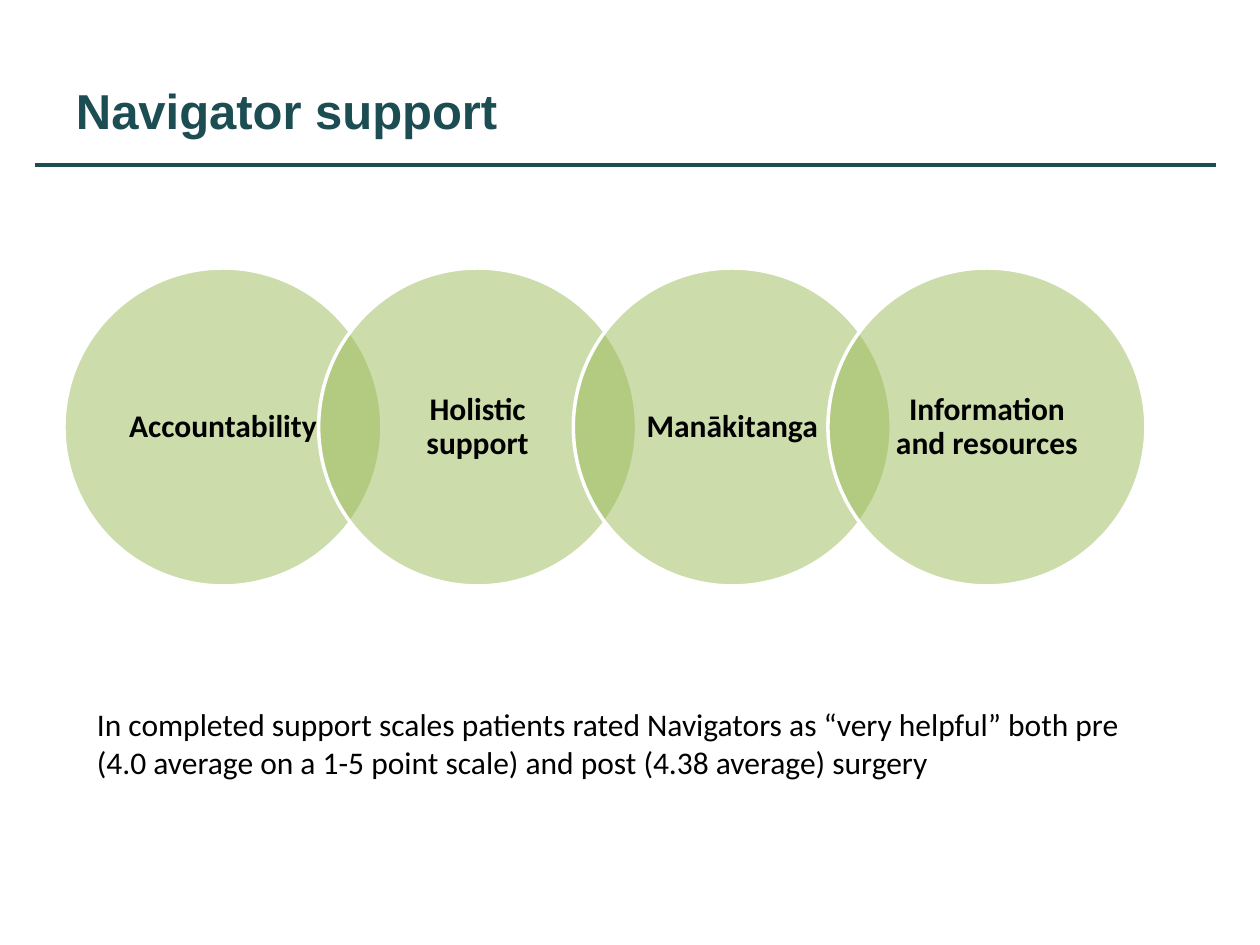
from lxml.etree import SubElement
from pptx import Presentation
from pptx.dml.color import RGBColor
from pptx.enum.shapes import MSO_CONNECTOR, MSO_SHAPE
from pptx.enum.text import MSO_ANCHOR, PP_ALIGN
from pptx.oxml.ns import qn
from pptx.util import Pt

TITLE = "Navigator support"
THEMES = ["Accountability", "Holistic support", "Manākitanga", "Information and resources"]
NOTE = ("In completed support scales patients rated Navigators as “very helpful” both pre "
        "(4.0 average on a 1-5 point scale) and post (4.38 average) surgery")
COLOR = {"teal": "1C4D52", "green": "9BBB59", "white": "FFFFFF", "black": "000000"}
HEAD = {"size": Pt(28), "name": "Arial", "bold": True}
LABEL = {"size": Pt(18), "name": "Calibri", "bold": True}
BODY = {"size": Pt(18), "name": "Calibri", "bold": False}
SCALE = 914400 / 126
FIRST, LAST, TOP, SIZE = 64, 828, 268, 318
INNER = 224


def px(n):
    return round(n * SCALE)


def rgb(name):
    return RGBColor.from_string(COLOR[name])


def write(shapes, text, box, font, color, anchor, align=PP_ALIGN.LEFT, space=1.0, pad=(13, 6)):
    frame = shapes.add_textbox(*map(px, box)).text_frame
    side, edge = map(px, pad)
    form = {"word_wrap": True, "vertical_anchor": anchor, "margin_left": side,
            "margin_right": side, "margin_top": edge, "margin_bottom": edge}
    for key, val in form.items():
        setattr(frame, key, val)
    para = frame.paragraphs[0]
    para.alignment = align
    para.line_spacing = space
    run = para.add_run()
    run.text = text
    for key, val in font.items():
        setattr(run.font, key, val)
    run.font.color.rgb = rgb(color)


def circle(shapes, left):
    disc = shapes.add_shape(MSO_SHAPE.OVAL, *map(px, (left, TOP, SIZE, SIZE)))
    disc.shadow.inherit = False
    disc.fill.solid()
    disc.fill.fore_color.rgb = rgb("green")
    tint = disc.fill._xPr.find(qn("a:solidFill"))[0]
    SubElement(tint, qn("a:alpha")).set("val", "50000")
    disc.line.color.rgb = rgb("white")
    disc.line.width = Pt(2)


def main():
    deck = Presentation()
    deck.slide_width, deck.slide_height = px(1260), px(945)
    shapes = deck.slides.add_slide(deck.slide_layouts[6]).shapes

    rule = shapes.add_connector(MSO_CONNECTOR.STRAIGHT, *map(px, (35, 165, 1216, 165)))
    rule.line.color.rgb = rgb("teal")
    rule.line.width = Pt(2.25)
    SubElement(rule._element.spPr, qn("a:effectLst"))
    write(shapes, TITLE, (63, 38, 1134, 107), HEAD, "teal", MSO_ANCHOR.BOTTOM)

    chain = shapes.add_group_shape().shapes
    step = (LAST - FIRST) / (len(THEMES) - 1)
    inset = (SIZE - INNER) / 2
    for i, theme in enumerate(THEMES):
        left = FIRST + i * step
        circle(chain, left)
        write(chain, theme, (left + inset, TOP + inset, INNER, INNER), LABEL, "black",
              MSO_ANCHOR.MIDDLE, PP_ALIGN.CENTER, 0.9, (17, 4))

    write(shapes, NOTE, (84, 699, 1071, 89), BODY, "black", MSO_ANCHOR.TOP)
    deck.save("out.pptx")


if __name__ == "__main__":
    main()
